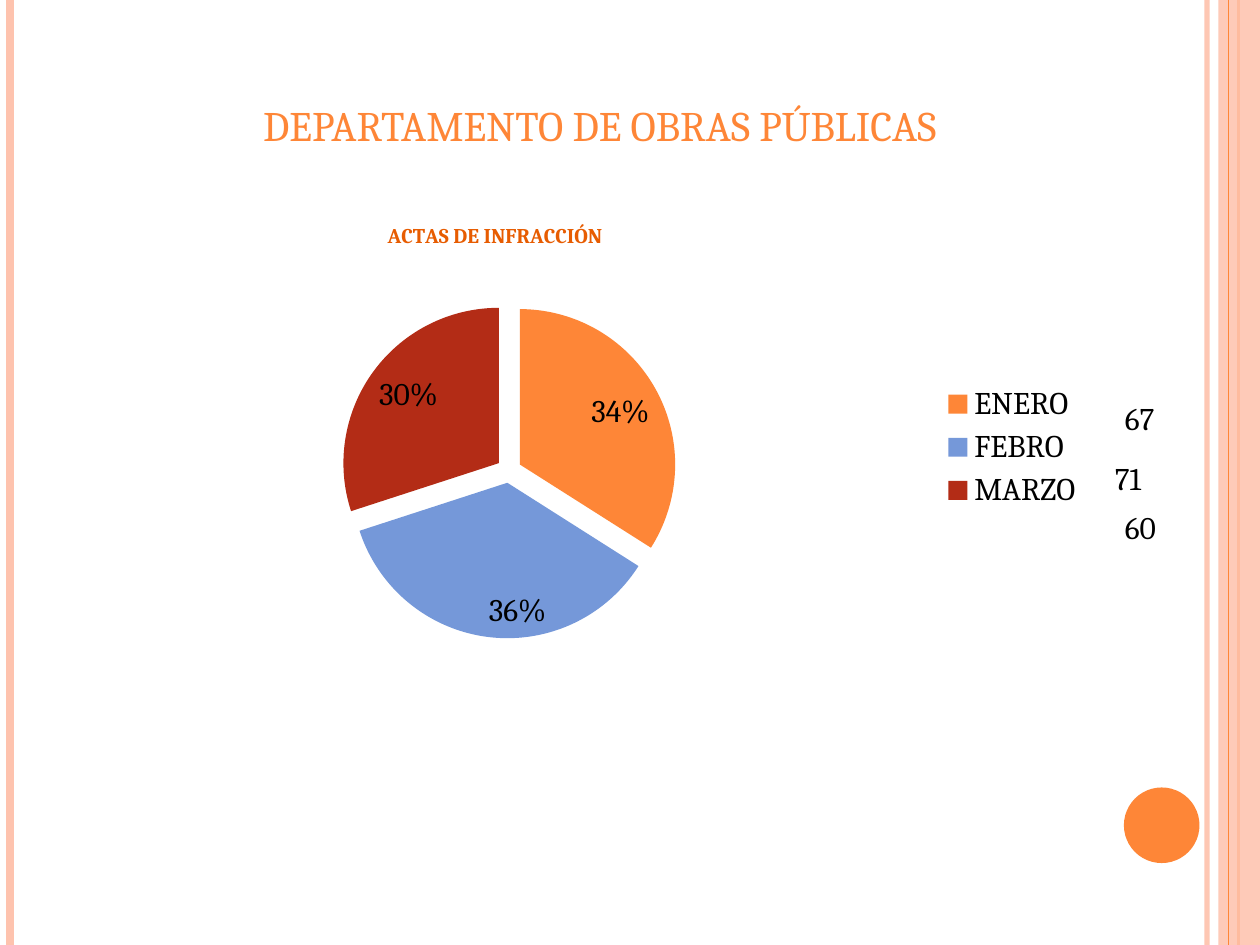
from pptx import Presentation, util as u
from pptx.chart.data import CategoryChartData
from pptx.dml.color import RGBColor
from pptx.enum import chart as ch, shapes, text
from pptx.oxml import parse_xml
from pptx.oxml.ns import nsdecls, qn
from lxml import etree

# Content
TITLE = "DEPARTAMENTO DE OBRAS PÚBLICAS"
CHART_TITLE = "ACTAS DE INFRACCIÓN"
MONTHS = [("ENERO", 34, "FE8637"), ("FEBRO", 36, "7598D9"), ("MARZO", 30, "B32C16")]
COUNTS = [("67", 8.83, 3.12), ("71", 8.75, 3.59), ("60", 8.83, 3.98)]

THEME = dict(font="Cambria", accent="FE8637", pale="FEC3AE", chart_title="E75C01",
             ink="000000", title=24, body=18, small=12)
W, H = 10, 7.5
# Vertical lines: x, colour, width in points, opacity in percent
RULES = [(9.58, "pale", 3, 93), (0.08, "pale", 4.5, 100), (9.83, "accent", 1.5, 100)]
EDGE_RULE = (9.75, "accent", 0.75, 100)


def rgb(name):
    return RGBColor.from_string(THEME.get(name, name))


def inches(*vals):
    return [u.Inches(v) for v in vals]


def style(font, size, color, bold=False):
    font.name, font.size, font.bold = THEME["font"], u.Pt(THEME[size]), bold
    font.color.rgb = rgb(color)


def set_alpha(sp, percent):
    for clr in sp._element.spPr.iter(qn("a:srgbClr")):
        etree.SubElement(clr, qn("a:alpha")).set("val", str(percent * 1000))


def add_rule(s, x, color, width, opacity):
    line = s.shapes.add_connector(shapes.MSO_CONNECTOR.STRAIGHT, *inches(x, 0, x, H))
    line.line.color.rgb = rgb(color)
    line.line.width = u.Pt(width)
    set_alpha(line, opacity)
    etree.SubElement(line._element.spPr, qn("a:effectLst"))


def add_solid(s, kind, color, *box):
    sp = s.shapes.add_shape(kind, *inches(*box))
    sp.shadow.inherit = False
    sp.fill.solid()
    sp.fill.fore_color.rgb = rgb(color)
    sp.line.fill.background()
    return sp


def manual_layout(x, y, w=None, h=None):
    size = f'<c:w val="{w}"/><c:h val="{h}"/>' if w else ""
    target = '<c:layoutTarget val="inner"/>' if w else ""
    return parse_xml(
        f'<c:layout {nsdecls("c")}><c:manualLayout>{target}<c:xMode val="edge"/>'
        f'<c:yMode val="edge"/><c:x val="{x}"/><c:y val="{y}"/>{size}'
        '</c:manualLayout></c:layout>')


def set_layout(parent, layout, index):
    for old in parent.findall(qn("c:layout")):
        parent.remove(old)
    parent.insert(index, layout)


def add_pie(s):
    data = CategoryChartData()
    data.categories = [m[0] for m in MONTHS]
    data.add_series(CHART_TITLE, [m[1] for m in MONTHS])
    chart = s.shapes.add_chart(ch.XL_CHART_TYPE.PIE, *inches(1.06, 1.7, 7.64, 3.7), data).chart
    style(chart.font, "body", "ink")

    # Title and plot positions
    chart.has_title = True
    tf = chart.chart_title.text_frame
    tf.text = CHART_TITLE
    style(tf.paragraphs[0].runs[0].font, "small", "chart_title", True)
    set_layout(chart.chart_title._element, manual_layout(0.26, 0.01), 1)
    set_layout(chart._chartSpace.chart.plotArea, manual_layout(0.05, 0.19, 0.68, 0.72), 0)

    chart.has_legend = True
    chart.legend.position = ch.XL_LEGEND_POSITION.RIGHT
    chart.legend.include_in_layout = False

    # Slices and percentages
    plot = chart.plots[0]
    plot.vary_by_categories = True
    ser = plot.series[0]
    for i, (_, _, color) in enumerate(MONTHS):
        fill = ser.points[i].format.fill
        fill.solid()
        fill.fore_color.rgb = rgb(color)
    ser._element.find(qn("c:dPt")).addprevious(
        parse_xml(f'<c:explosion {nsdecls("c")} val="8"/>'))
    for dpt in ser._element.findall(qn("c:dPt")):
        dpt.find(qn("c:spPr")).addprevious(
            parse_xml(f'<c:explosion {nsdecls("c")} val="8"/>'))
    plot.has_data_labels = True
    labels = plot.data_labels
    labels.show_percentage, labels.show_value = True, False
    labels.number_format, labels.number_format_is_linked = "0%", False
    labels.position = ch.XL_LABEL_POSITION.INSIDE_END
    style(labels.font, "body", "ink")


def main():
    prs = Presentation()
    prs.slide_width, prs.slide_height = inches(W, H)
    s = prs.slides.add_slide(prs.slide_layouts[5])

    # Side bands and circle
    for rule in RULES:
        add_rule(s, *rule)
    set_alpha(add_solid(s, shapes.MSO_SHAPE.RECTANGLE, "pale", 9.67, 0, 0.33, H), 87)
    add_rule(s, *EDGE_RULE)
    add_solid(s, shapes.MSO_SHAPE.OVAL, "accent", 8.92, 6.25, 0.6, 0.6)

    # Title
    title = s.shapes.title
    title.left, title.top, title.width, title.height = inches(0.83, 0.36, 7.86, 0.88)
    tf = title.text_frame
    tf.text = TITLE
    tf.vertical_anchor = text.MSO_ANCHOR.BOTTOM
    p = tf.paragraphs[0]
    p.alignment = text.PP_ALIGN.CENTER
    style(p.runs[0].font, "title", "accent")

    add_pie(s)

    # Monthly counts beside the legend
    for count, x, y in COUNTS:
        tf = s.shapes.add_textbox(*inches(x, y, 0.55, 0.4)).text_frame
        tf.word_wrap = True
        tf.text = count
        style(tf.paragraphs[0].runs[0].font, "body", "ink")

    prs.save("out.pptx")


if __name__ == "__main__":
    main()
